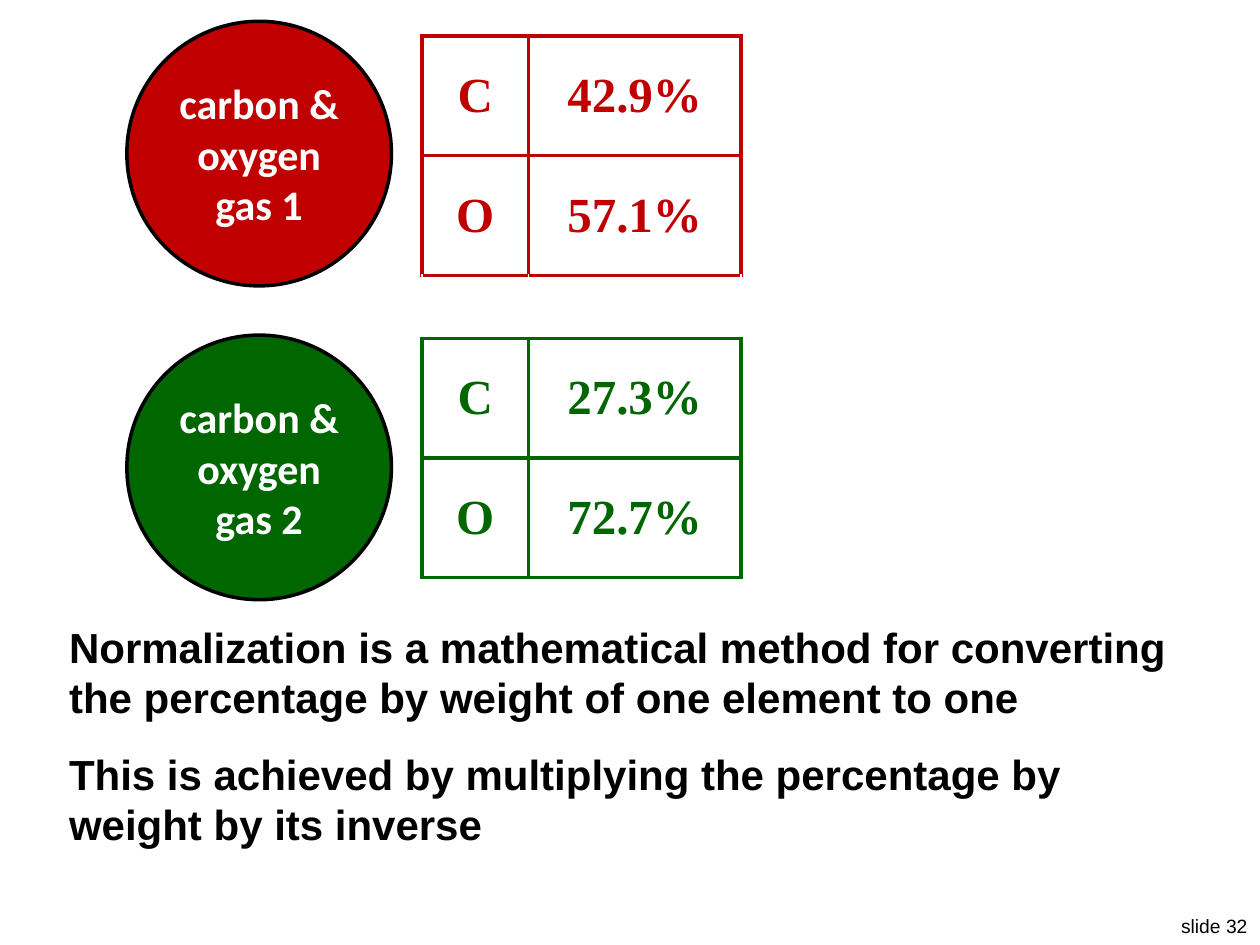
from dataclasses import dataclass

from lxml.etree import SubElement
from pptx import Presentation
from pptx.dml.color import RGBColor as Color
from pptx.enum.shapes import MSO_SHAPE as Preset
from pptx.enum.text import MSO_ANCHOR as Anchor, MSO_AUTO_SIZE as AutoSize, PP_ALIGN as Align
from pptx.oxml.ns import qn
from pptx.util import Pt


@dataclass(frozen=True)
class Theme:
    red: str = "C00000"
    green: str = "006600"
    black: str = "000000"
    white: str = "FFFFFF"
    body_font: str = "Arial"
    circle_font: str = "Calibri"
    table_font: str = "Times New Roman"
    body_size: int = 24
    table_size: int = 28
    number_size: int = 11
    outline: float = 2
    border: float = 2.25
    thin: float = 1


theme = Theme()


def write(frame, text, font=theme.body_font, size=theme.body_size, color=theme.black,
          bold=True, align=Align.LEFT, anchor=Anchor.TOP, wrap=True):
    frame.word_wrap = wrap
    frame.vertical_anchor = anchor
    para = frame.paragraphs[0]
    para.alignment = align
    span = para.add_run()
    span.text = text
    span.font.name = font
    span.font.size = Pt(size)
    span.font.bold = bold
    span.font.color.rgb = Color.from_string(color)


def set_borders(cell, **edges):
    cell.fill.background()
    properties = cell._tc.get_or_add_tcPr()
    for position, side in enumerate("LRTB"):
        color, width = edges[side]
        line = SubElement(properties, qn(f"a:ln{side}"), w=str(Pt(width)))
        fill = SubElement(line, qn("a:solidFill"))
        SubElement(fill, qn("a:srgbClr"), val=color)
        properties.insert(position, line)


deck = Presentation()
deck.slide_width, deck.slide_height = Pt(720), Pt(540)
page = deck.slides.add_slide(deck.slide_layouts[6])

gases = [
    ("carbon & oxygen gas 1", theme.red, 12.2, 0, ("42.9%", "57.1%")),
    ("carbon & oxygen gas 2", theme.green, 191.5, 3, ("27.3%", "72.7%")),
]

table = page.shapes.add_table(5, 2, Pt(241.2), Pt(20.5), Pt(182.2), Pt(313.6)).table
table.first_row = table.horz_banding = False
for column, width in zip(table.columns, (60.7, 121.5)):
    column.width = Pt(width)
for row, height in zip(table.rows, (68.4, 68.4, 36, 68.4, 68.4)):
    row.height = Pt(height)

for label, color, top, first_row, shares in gases:
    circle = page.shapes.add_shape(Preset.OVAL, Pt(72.5), Pt(top), Pt(151.2), Pt(151.2))
    circle.shadow.inherit = False
    circle.fill.solid()
    circle.fill.fore_color.rgb = Color.from_string(color)
    circle.line.color.rgb = Color.from_string(theme.black)
    circle.line.width = Pt(theme.outline)
    write(circle.text_frame, label, font=theme.circle_font, color=theme.white,
          align=Align.CENTER, anchor=Anchor.MIDDLE)

    for row, entries in enumerate(zip("CO", shares), first_row):
        for column, entry in enumerate(entries):
            cell = table.cell(row, column)
            write(cell.text_frame, entry, font=theme.table_font, size=theme.table_size,
                  color=color, align=Align.CENTER)
            cell.vertical_anchor = Anchor.MIDDLE
            set_borders(cell, **dict.fromkeys("LRTB", (color, theme.border)))

for column in range(2):
    set_borders(table.cell(2, column),
                L=(theme.white, theme.thin), R=(theme.white, theme.thin),
                T=(theme.red, theme.border), B=(theme.green, theme.border))

statements = [
    (351.4, "Normalization is a mathematical method for converting the percentage by weight of one element to one"),
    (424.1, "This is achieved by multiplying the percentage by weight by its inverse"),
]
for top, statement in statements:
    box = page.shapes.add_textbox(Pt(32.4), Pt(top), Pt(655.2), Pt(65.5))
    write(box.text_frame, statement)
    box.text_frame.auto_size = AutoSize.SHAPE_TO_FIT_TEXT

number = page.shapes.add_textbox(Pt(666), Pt(519.1), Pt(54), Pt(20.9))
write(number.text_frame, "slide 32", size=theme.number_size, bold=False,
      align=Align.RIGHT, wrap=False)
number.text_frame.auto_size = AutoSize.SHAPE_TO_FIT_TEXT

deck.save("out.pptx")
